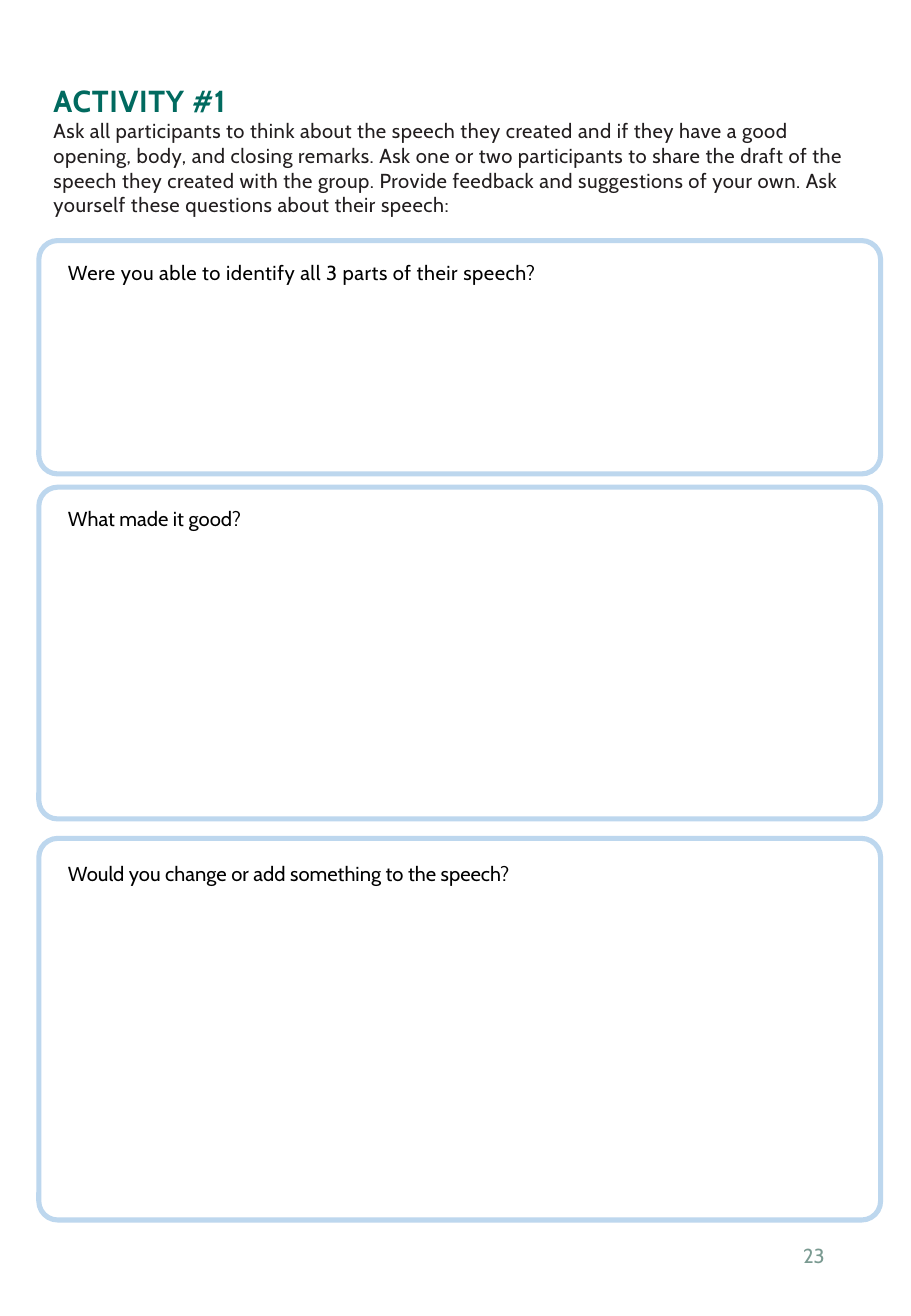
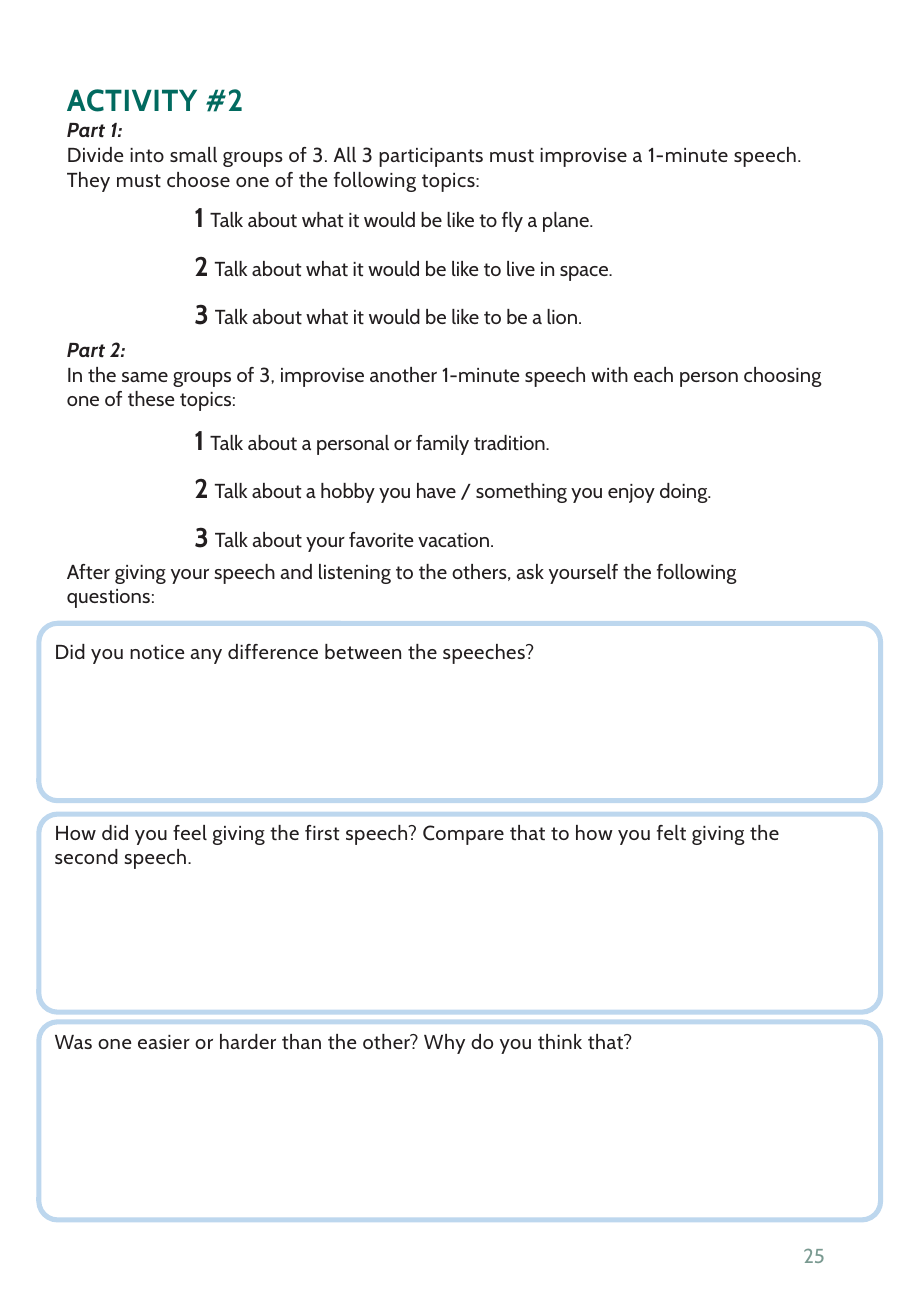
"""Builds two activity worksheets with framed answer boxes."""
from pptx import Presentation
from pptx.dml.color import RGBColor
from pptx.enum.shapes import MSO_SHAPE
from pptx.enum.text import MSO_ANCHOR, PP_ALIGN
from pptx.util import Inches, Pt

ROUNDED = MSO_SHAPE.ROUNDED_RECTANGLE
TOP, MIDDLE = MSO_ANCHOR.TOP, MSO_ANCHOR.MIDDLE
LEFT, RIGHT = PP_ALIGN.LEFT, PP_ALIGN.RIGHT

GREEN = RGBColor(0x01, 0x6A, 0x5F)
SAGE = RGBColor(0x7A, 0x9A, 0x91)
INK = RGBColor(0x22, 0x1E, 0x1F)
BLACK = RGBColor(0x00, 0x00, 0x00)
FRAME_BLUE = RGBColor(0xBD, 0xD7, 0xEE)

FONT = "Cabin"
FRAME_LEFT, FRAME_WIDTH, CORNER = 0.32, 6.93, 0.155
STYLES = {
    "title": dict(size=18, color=GREEN, bold=True, tracking=0.4),
    "part": dict(size=12, color=INK, bold=True, italic=True, tracking=0.2),
    "body": dict(size=12, color=INK, tracking=0.3),
    "even": dict(size=12, color=INK, tracking=0.1),
    "number": dict(size=16, color=INK, bold=True),
    "topic": dict(size=12, color=INK),
    "question": dict(size=12, color=BLACK),
    "spaced question": dict(size=12, color=BLACK, tracking=0.3),
    "page": dict(size=12, color=SAGE),
}
TITLE_LINE, FIRST_LINE = Pt(21.6), Pt(14.2)


def numbered(*topics):
    return [([(f"{number} ", "number"), (topic, "topic")], 1.5, 0)
            for number, topic in enumerate(topics, 1)]


PAGES = [
    {
        "number": "23",
        "texts": [
            (0.44, 0.68, 6.58, [
                ([("ACTIVITY #1", "title")], TITLE_LINE, 0.9),
                ([("Ask all participants to think about the speech they created "
                   "and if they have a good", "body")], FIRST_LINE, 0),
                ([("opening, body, and closing remarks. Ask one or two participants "
                   "to share the draft of the speech they created with the group. "
                   "Provide feedback and suggestions of your own. Ask yourself these "
                   "questions about their speech:", "body")], 1.01, 0),
            ]),
        ],
        "question_left": 0.56,
        "questions": [
            (1.98, 1.92, 2.14, "Were you able to identify all 3 parts of their speech?",
             "spaced question"),
            (4.01, 2.73, 4.17, "What made it good?", "question"),
            (6.9, 3.14, 7.09, "Would you change or add something to the speech?",
             "question"),
        ],
    },
    {
        "number": "25",
        "texts": [
            (0.55, 0.67, 6.43, [
                ([("ACTIVITY #2", "title")], TITLE_LINE, 0.9),
                ([("Part 1:", "part")], FIRST_LINE, 0),
                ([("Divide into small groups of 3. All 3 participants must improvise "
                   "a 1-minute speech.", "body")], 1.0, 0.2),
                ([("They must choose one of the following topics:", "body")], 1.0, 0.2),
            ]),
            (1.6, 1.52, 4.3, numbered(
                "Talk about what it would be like to fly a plane.",
                "Talk about what it would be like to live in space.",
                "Talk about what it would be like to be a lion.")),
            (0.55, 2.78, 6.43, [
                ([("Part 2:", "part")], FIRST_LINE, 0),
                ([("In the same groups of 3, improvise another 1-minute speech with "
                   "each person choosing one of these topics:", "even")], 1.0, 0.2),
            ]),
            (1.6, 3.35, 4.57, numbered(
                "Talk about a personal or family tradition.",
                "Talk about a hobby you have / something you enjoy doing.",
                "Talk about your favorite vacation.")),
            (0.55, 4.6, 6.43, [
                ([("After giving your speech and listening to the others, ask "
                   "yourself the following", "even")], 1.0, 0.2),
                ([("questions:", "even")], 1.0, 0.2),
            ]),
        ],
        "question_left": 0.45,
        "questions": [
            (5.13, 1.46, 5.26, "Did you notice any difference between the speeches?",
             "body"),
            (6.7, 1.63, 6.75, "How did you feel giving the first speech? Compare that "
             "to how you felt giving the second speech.", "body"),
            (8.41, 1.63, 8.47, "Was one easier or harder than the other? Why do you "
             "think that?", "body"),
        ],
    },
]


def format_run(run, size, color, bold=False, italic=False, tracking=0):
    run.font.name = FONT
    run.font.size = Pt(size)
    run.font.color.rgb = color
    run.font.bold = bold
    run.font.italic = italic
    if tracking:
        run.font._element.set("spc", str(round(tracking * 100)))


def add_text(slide, left, top, width, height, paragraphs, align=LEFT, anchor=TOP):
    shape = slide.shapes.add_textbox(
        Inches(left), Inches(top), Inches(width), Inches(height))
    frame = shape.text_frame
    frame.word_wrap = True
    frame.vertical_anchor = anchor
    frame.margin_left = frame.margin_right = 0
    frame.margin_top = frame.margin_bottom = 0
    for index, (runs, line_spacing, space_before) in enumerate(paragraphs):
        paragraph = frame.add_paragraph() if index else frame.paragraphs[0]
        paragraph.alignment = align
        paragraph.line_spacing = line_spacing
        paragraph.space_before = Pt(space_before)
        for text, style in runs:
            run = paragraph.add_run()
            run.text = text
            format_run(run, **STYLES[style])


def add_frame(slide, top, height):
    shape = slide.shapes.add_shape(
        ROUNDED, Inches(FRAME_LEFT), Inches(top), Inches(FRAME_WIDTH), Inches(height))
    shape.adjustments[0] = CORNER / min(FRAME_WIDTH, height)
    shape.shadow.inherit = False
    shape.fill.background()
    shape.line.color.rgb = FRAME_BLUE
    shape.line.width = Pt(3)


def add_page(presentation, page):
    slide = presentation.slides.add_slide(presentation.slide_layouts[6])
    add_text(slide, 5.3, 10.04, 1.5 - 0.01, 0.58,
             [([(page["number"], "page")], 1.0, 0)], RIGHT, MIDDLE)
    for left, top, width, paragraphs in page["texts"]:
        add_text(slide, left, top, width, 0.3 * len(paragraphs), paragraphs)
    for top, height, text_top, question, style in page["questions"]:
        add_frame(slide, top, height)
        add_text(slide, page["question_left"], text_top, 6.3, 0.2,
                 [([(question, style)], 1.0, 0.7)])


def main():
    presentation = Presentation()
    presentation.slide_width = Inches(7.5)
    presentation.slide_height = Inches(10.83)
    for page in PAGES:
        add_page(presentation, page)
    presentation.save("out.pptx")


if __name__ == "__main__":
    main()
